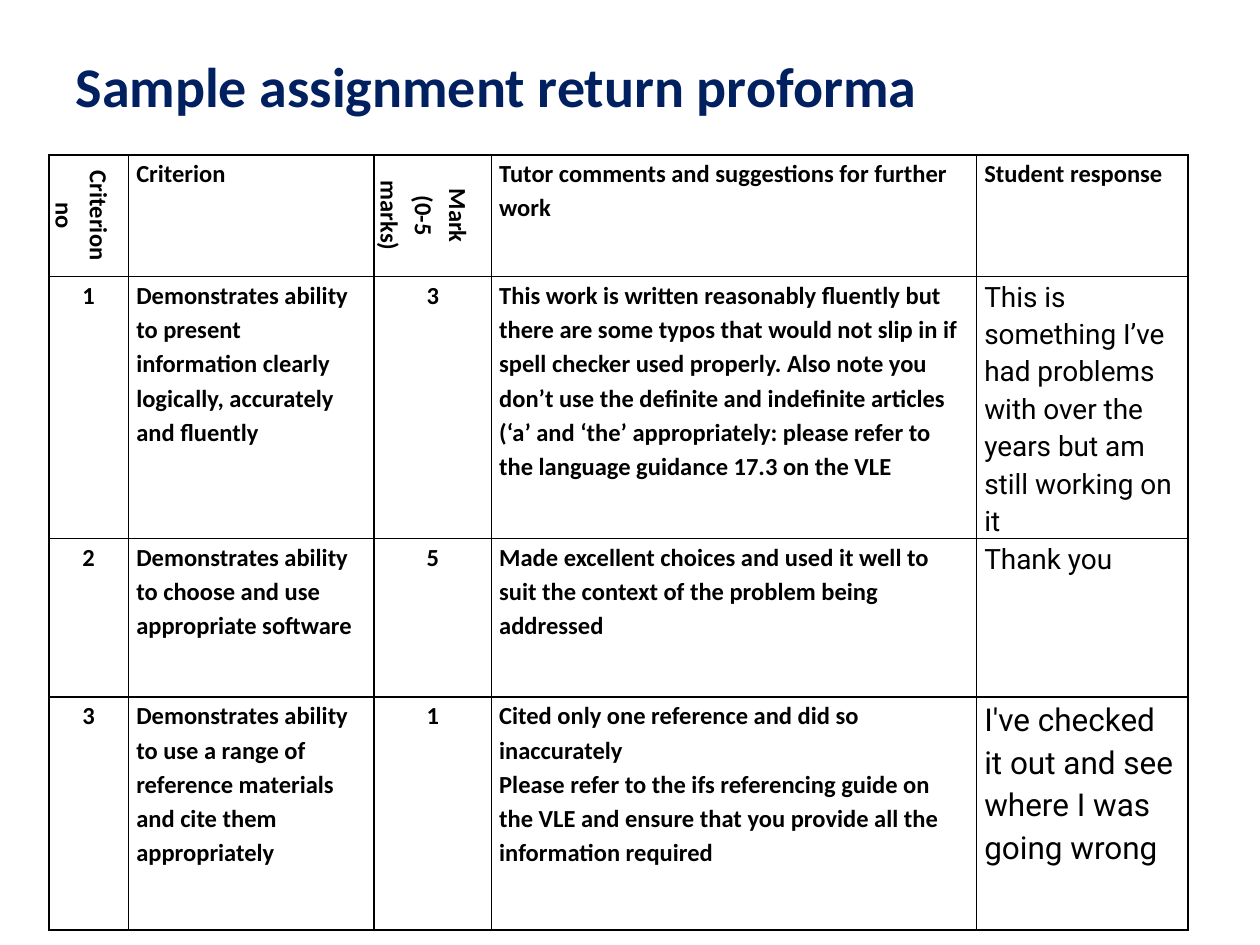
"""Build a slide with a sample assignment return form as a table."""
from dataclasses import dataclass

from lxml.etree import SubElement
from pptx import Presentation
from pptx.dml.color import RGBColor
from pptx.enum.text import MSO_ANCHOR, PP_ALIGN
from pptx.oxml.ns import qn
from pptx.util import Pt


@dataclass(frozen=True)
class Theme:
    """Colours, fonts and type sizes of the slide."""
    navy: str = "002060"
    black: str = "000000"
    main_font: str = "Calibri"
    reply_font: str = "Roboto"
    title_size: int = 32
    body_size: int = 14
    line_spacing: float = 1.15
    border: int = 1


THEME = Theme()
TITLE = "Sample assignment return proforma"
HEADER = ["Criterion no", "Criterion", "Mark\n(0-5 marks)",
          "Tutor comments and suggestions for further work", "Student response"]
ROWS = [
    ["1",
     "Demonstrates ability to present information clearly logically, accurately and fluently",
     "3",
     "This work is written reasonably fluently but there are some typos that would not slip in "
     "if spell checker used properly. Also note you don’t use the definite and indefinite "
     "articles (‘a’ and ‘the’ appropriately: please refer to the language guidance 17.3 on the VLE",
     "This is something I’ve had problems with over the years but am still working on it"],
    ["2",
     "Demonstrates ability to choose and use appropriate software",
     "5",
     "Made excellent choices and used it well to suit the context of the problem being addressed",
     "Thank you"],
    ["3",
     "Demonstrates ability to use a range of reference materials and cite them appropriately",
     "1",
     "Cited only one reference and did so inaccurately\n"
     "Please refer to the ifs referencing guide on the VLE and ensure that you provide all the "
     "information required",
     "I've checked it out and see where I was going wrong"],
]
REPLY_SIZES = [16, 16, 18]
COLUMN_WIDTHS = [45.4, 140.4, 67, 277.2, 121]
ROW_HEIGHTS = [66.2, 127.4, 90.7, 133.2]
TABLE_LEFT, TABLE_TOP = 28, 88.5
CENTRED_COLUMNS = (0, 2)
REPLY_COLUMN = 4


def style_font(font, name, size, colour, bold):
    """Apply one type style to a font."""
    font.name = name
    font.size = Pt(size)
    font.bold = bold
    font.color.rgb = RGBColor.from_string(colour)


def add_borders(cell):
    """Draw a thin black line on every side of a cell."""
    properties = cell._tc.get_or_add_tcPr()
    for index, side in enumerate(("a:lnL", "a:lnR", "a:lnT", "a:lnB")):
        line = SubElement(properties, qn(side), w=str(Pt(THEME.border)))
        fill = SubElement(line, qn("a:solidFill"))
        SubElement(fill, qn("a:srgbClr"), val=THEME.black)
        properties.insert(index, line)


def fill_cell(cell, text, row, column):
    """Write and format one cell according to its row and column."""
    cell.fill.background()
    add_borders(cell)
    cell.margin_left = cell.margin_right = Pt(4.5)
    cell.margin_top = cell.margin_bottom = Pt(0)
    cell.vertical_anchor = MSO_ANCHOR.TOP
    if row == 0 and column in CENTRED_COLUMNS:
        cell._tc.get_or_add_tcPr().set("vert", "vert")
    is_reply = row > 0 and column == REPLY_COLUMN
    name = THEME.reply_font if is_reply else THEME.main_font
    size = REPLY_SIZES[row - 1] if is_reply else THEME.body_size
    cell.text_frame.text = text
    for para in cell.text_frame.paragraphs:
        para.line_spacing = THEME.line_spacing
        para.alignment = PP_ALIGN.CENTER if column in CENTRED_COLUMNS else PP_ALIGN.LEFT
        for span in para.runs:
            style_font(span.font, name, size, THEME.black, not is_reply)


def add_title(page):
    """Place and format the title."""
    title = page.shapes.title
    title.left, title.top, title.width, title.height = Pt(36), Pt(19.4), Pt(594), Pt(51.8)
    title.text_frame.text = TITLE
    title.text_frame.vertical_anchor = MSO_ANCHOR.BOTTOM
    para = title.text_frame.paragraphs[0]
    para.alignment = PP_ALIGN.LEFT
    style_font(para.runs[0].font, THEME.main_font, THEME.title_size, THEME.navy, True)


def add_form(page):
    """Add the table of criteria, marks and comments."""
    table = page.shapes.add_table(
        len(ROW_HEIGHTS), len(COLUMN_WIDTHS), Pt(TABLE_LEFT), Pt(TABLE_TOP),
        Pt(sum(COLUMN_WIDTHS)), Pt(sum(ROW_HEIGHTS))).table
    table.first_row = table.horz_banding = False
    for column, width in zip(table.columns, COLUMN_WIDTHS):
        column.width = Pt(width)
    for row, height in zip(table.rows, ROW_HEIGHTS):
        row.height = Pt(height)
    for row, texts in enumerate([HEADER, *ROWS]):
        for column, text in enumerate(texts):
            fill_cell(table.cell(row, column), text, row, column)


def main():
    """Create and save the deck."""
    deck = Presentation()
    deck.slide_width, deck.slide_height = Pt(720), Pt(540)
    page = deck.slides.add_slide(deck.slide_layouts[5])
    add_form(page)
    add_title(page)
    deck.save("out.pptx")


if __name__ == "__main__":
    main()
